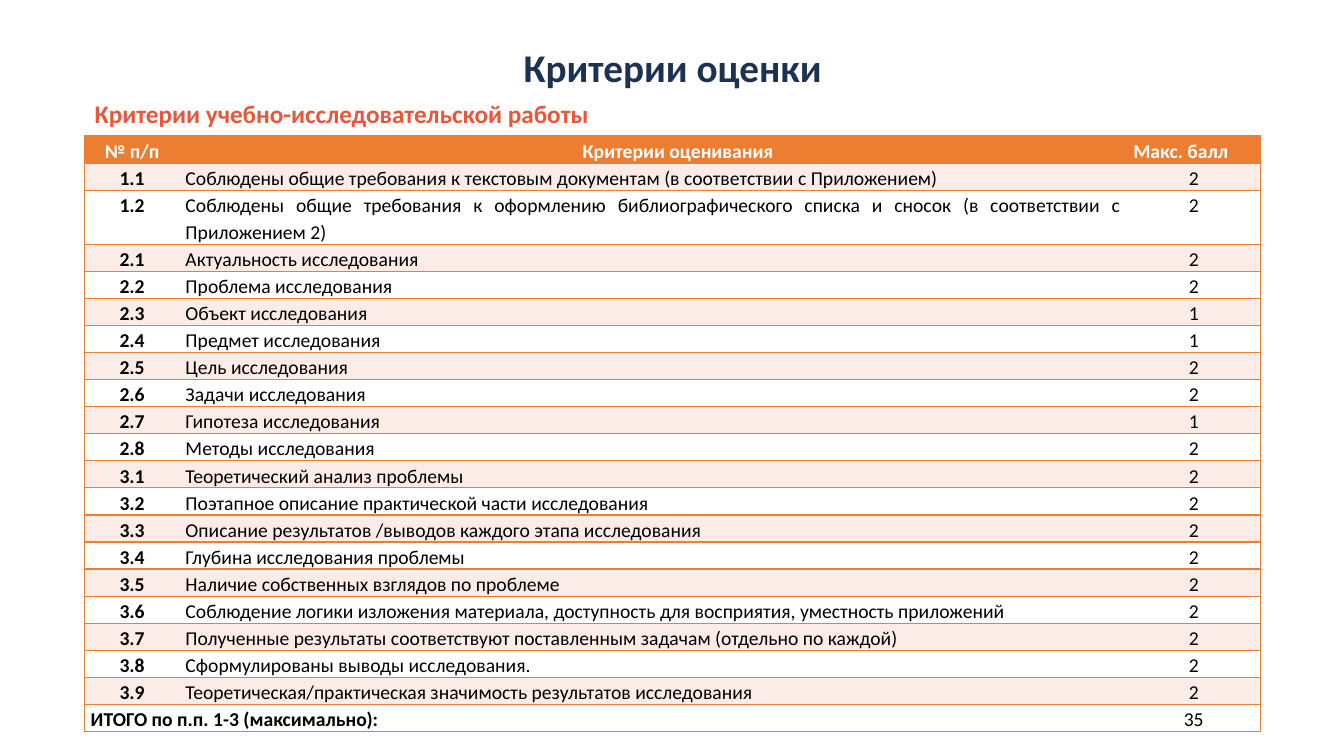
from dataclasses import dataclass

from lxml import etree
from pptx import Presentation
from pptx.dml.color import RGBColor
from pptx.enum.text import MSO_AUTO_SIZE, PP_ALIGN
from pptx.oxml.ns import qn
from pptx.util import Inches, Pt

LEFT, CENTER, JUSTIFY = PP_ALIGN.LEFT, PP_ALIGN.CENTER, PP_ALIGN.JUSTIFY
FIT_SHAPE = MSO_AUTO_SIZE.SHAPE_TO_FIT_TEXT


@dataclass(frozen=True)
class Theme:
    font: str = "Calibri"
    navy: str = "1D3152"
    coral: str = "E8573B"
    orange: str = "ED7D31"
    blush: str = "FCECE8"
    white: str = "FFFFFF"
    black: str = "000000"
    title_size: int = 28
    subtitle_size: int = 18
    table_size: int = 14
    line_spacing: float = 1.15
    border_width: int = 1


HEADER = ("№ п/п", "Критерии оценивания", "Макс. балл")
CRITERIA = [
    ("1.1", "Соблюдены общие требования к текстовым документам (в соответствии с Приложением)", 2),
    ("1.2", "Соблюдены общие требования к оформлению библиографического списка и сносок "
            "(в соответствии с Приложением 2)", 2),
    ("2.1", "Актуальность исследования", 2),
    ("2.2", "Проблема исследования", 2),
    ("2.3", "Объект исследования", 1),
    ("2.4", "Предмет исследования", 1),
    ("2.5", "Цель исследования", 2),
    ("2.6", "Задачи исследования", 2),
    ("2.7", "Гипотеза исследования", 1),
    ("2.8", "Методы исследования", 2),
    ("3.1", "Теоретический анализ проблемы", 2),
    ("3.2", "Поэтапное описание практической части исследования", 2),
    ("3.3", "Описание результатов /выводов каждого этапа исследования", 2),
    ("3.4", "Глубина исследования проблемы", 2),
    ("3.5", "Наличие собственных взглядов по проблеме", 2),
    ("3.6", "Соблюдение логики изложения материала, доступность для восприятия, "
            "уместность приложений", 2),
    ("3.7", "Полученные результаты соответствуют поставленным задачам (отдельно по каждой)", 2),
    ("3.8", "Сформулированы выводы исследования.", 2),
    ("3.9", "Теоретическая/практическая значимость результатов исследования", 2),
]
JUSTIFIED = {"1.1", "1.2", "2.7", "2.8", "3.6", "3.7", "3.9"}
TOTAL_LABEL = "ИТОГО по п.п. 1-3 (максимально):"
COLUMN_WIDTHS = (0.94, 9.4, 1.32)
ROW_HEIGHT = 0.26
HEADER_INDENT = 0.49


class SlideBuilder:
    def __init__(self, slide, theme):
        self.slide = slide
        self.theme = theme

    def set_text(self, frame, text, size, color, bold, align, spacing=None):
        paragraph = frame.paragraphs[0]
        paragraph.text = text
        paragraph.alignment = align
        paragraph.line_spacing = spacing
        font = paragraph.font
        font.name, font.size, font.bold = self.theme.font, Pt(size), bold
        font.color.rgb = RGBColor.from_string(color)
        return paragraph

    def heading(self, top, height, text, size, color, align, spacing=None, inset=0.1):
        box = self.slide.shapes.add_textbox(
            Inches(0.84), Inches(top), Inches(11.66), Inches(height))
        frame = box.text_frame
        frame.word_wrap = True
        frame.margin_left = frame.margin_right = Inches(inset)
        self.set_text(frame, text, size, color, True, align, spacing)
        return frame

    def borders(self, cell, visible):
        """Draw the sides named in visible (L, R, T, B) and clear the others."""
        properties = cell._tc.get_or_add_tcPr()
        for side in "LRTB":
            line = etree.SubElement(properties, qn(f"a:ln{side}"),
                                    w=str(Pt(self.theme.border_width)))
            if side in visible:
                fill = etree.SubElement(line, qn("a:solidFill"))
                etree.SubElement(fill, qn("a:srgbClr"), val=self.theme.orange)
            else:
                etree.SubElement(line, qn("a:noFill"))

    def cell(self, cell, text, sides, background, color, bold, align):
        self.borders(cell, sides)
        cell.fill.solid()
        cell.fill.fore_color.rgb = RGBColor.from_string(background)
        cell.margin_left = cell.margin_right = Inches(0.06)
        cell.margin_top = cell.margin_bottom = 0
        return self.set_text(cell.text_frame, text, self.theme.table_size, color,
                             bold, align, self.theme.line_spacing)

    def row(self, table, index, texts, background, color, bolds, aligns):
        columns = zip(texts, ("LTB", "TB", "RTB"), bolds, aligns)
        return [self.cell(table.cell(index, column), text, sides, background, color, bold, align)
                for column, (text, sides, bold, align) in enumerate(columns)]

    def criteria_table(self):
        theme = self.theme
        row_count = len(CRITERIA) + 2
        table = self.slide.shapes.add_table(
            row_count, len(HEADER), Inches(0.84), Inches(1.35),
            Inches(sum(COLUMN_WIDTHS)), Inches(ROW_HEIGHT * row_count)).table
        for column, width in zip(table.columns, COLUMN_WIDTHS):
            column.width = Inches(width)
        for row in table.rows:
            row.height = Inches(ROW_HEIGHT)

        header = self.row(table, 0, HEADER, theme.orange, theme.white,
                          (True, True, True), (CENTER, CENTER, LEFT))
        header[1]._p.get_or_add_pPr().set("indent", str(Inches(HEADER_INDENT)))

        for index, (number, criterion, score) in enumerate(CRITERIA, start=1):
            self.row(table, index, (number, criterion, str(score)),
                     theme.blush if index % 2 else theme.white, theme.black,
                     (True, False, False),
                     (CENTER, JUSTIFY if number in JUSTIFIED else LEFT, CENTER))

        last = row_count - 1
        total = sum(score for _, _, score in CRITERIA)
        self.row(table, last, (TOTAL_LABEL, "", str(total)), theme.white, theme.black,
                 (True, False, False), (LEFT, LEFT, CENTER))
        table.cell(last, 0).merge(table.cell(last, 1))


def main():
    presentation = Presentation()
    presentation.slide_width, presentation.slide_height = Inches(13.33), Inches(7.5)
    theme = Theme()
    builder = SlideBuilder(
        presentation.slides.add_slide(presentation.slide_layouts[6]), theme)
    builder.heading(0.38, 0.63, "Критерии оценки", theme.title_size, theme.navy,
                    CENTER, inset=0.05)
    subtitle = builder.heading(0.88, 0.43, "Критерии учебно-исследовательской работы",
                               theme.subtitle_size, theme.coral, LEFT, theme.line_spacing)
    subtitle.auto_size = FIT_SHAPE
    builder.criteria_table()
    presentation.save("out.pptx")


if __name__ == "__main__":
    main()
